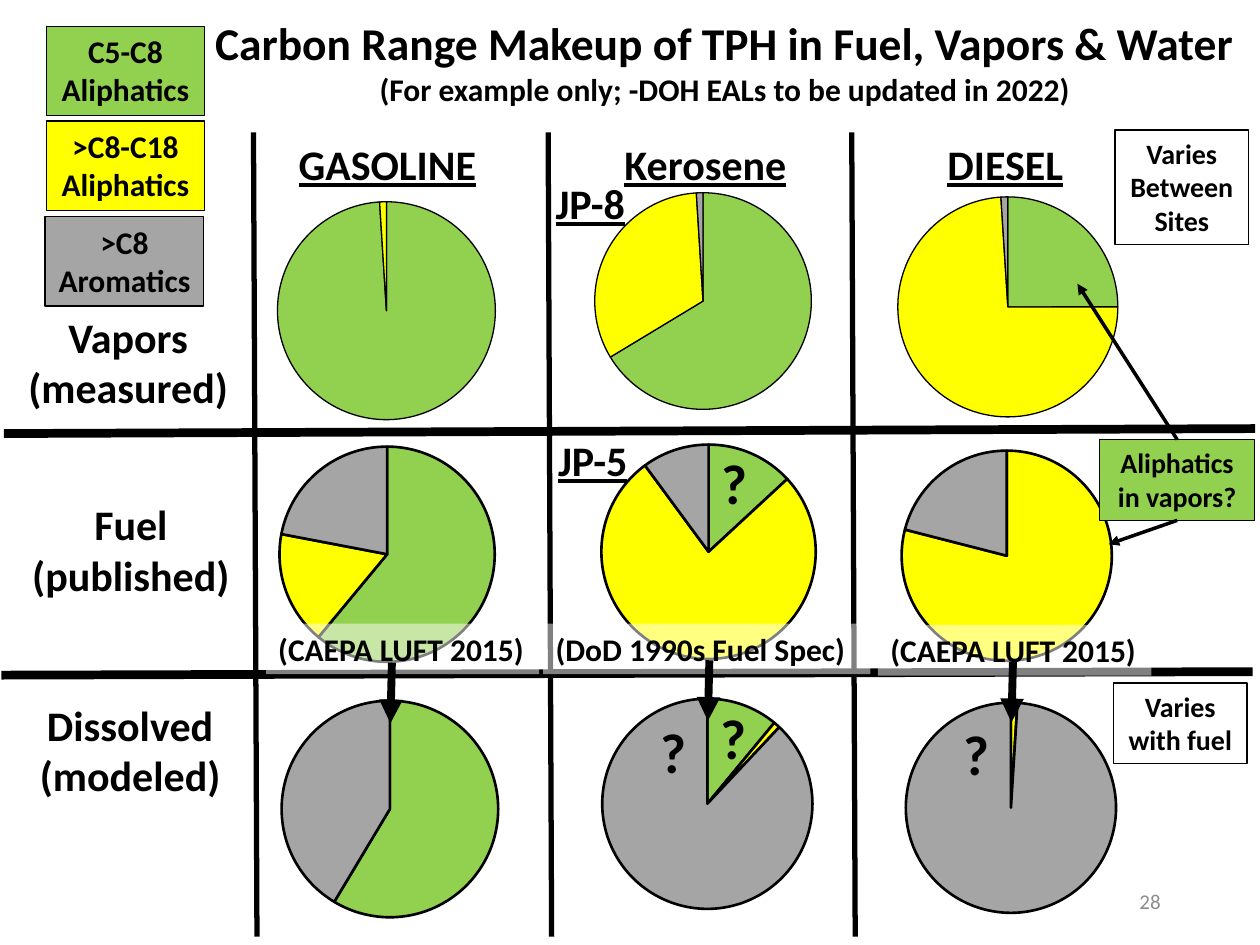
from lxml import etree
from pptx import Presentation
from pptx.chart.data import CategoryChartData as Data
from pptx.dml.color import RGBColor
from pptx.enum.chart import XL_CHART_TYPE as Kind
from pptx.enum.shapes import MSO_CONNECTOR as Wire, MSO_SHAPE as Form
from pptx.enum.text import MSO_ANCHOR as Anchor, MSO_AUTO_SIZE as Fit, PP_ALIGN as Align
from pptx.oxml import parse_xml
from pptx.oxml.ns import nsdecls, qn
from pptx.util import Cm, Pt

rgb = RGBColor.from_string
FONT, BLACK, WHITE = "Calibri", "000000", "FFFFFF"
GREEN, YELLOW, GRAY = "92D050", "FFFF00", "A5A5A5"

deck = Presentation()
deck.slide_width, deck.slide_height = Cm(25.4), Cm(19.05)
slide = deck.slides.add_slide(deck.slide_layouts[6])
shapes = slide.shapes


def box(at, rows, size, fill=None, edge=False, wrap=False, align=Align.CENTER):
    """Add a bold text box, or a rectangle when it has a fill or an edge."""
    place = [Cm(n) for n in at]
    if fill or edge:
        item = shapes.add_shape(Form.RECTANGLE, *place)
        item.shadow.inherit = False
        if fill:
            item.fill.solid()
            item.fill.fore_color.rgb = rgb(fill)
        else:
            item.fill.background()
        if edge:
            item.line.color.rgb = rgb(BLACK)
            item.line.width = Pt(0.75)
        else:
            item.line.fill.background()
    else:
        item = shapes.add_textbox(*place)
    frame = item.text_frame
    frame.text = "\n".join(rows)
    frame.word_wrap = wrap
    frame.auto_size = Fit.SHAPE_TO_FIT_TEXT
    frame.vertical_anchor = Anchor.TOP
    for para in frame.paragraphs:
        para.alignment = align
        font = para.font
        font.name, font.size, font.bold = FONT, Pt(size), True
        font.color.rgb = rgb(BLACK)
    return item


def link(x1, y1, x2, y2, width, arrow=False):
    """Add a straight black line, with an arrowhead at its end if asked."""
    wire = shapes.add_connector(Wire.STRAIGHT, Cm(x1), Cm(y1), Cm(x2), Cm(y2))
    wire.line.color.rgb = rgb(BLACK)
    wire.line.width = Pt(width)
    if arrow:
        edge = wire.line._get_or_add_ln()
        etree.SubElement(edge, qn("a:tailEnd"), type="triangle")
    etree.SubElement(wire._element.spPr, qn("a:effectLst"))
    return wire


# Pies: place, values, slice colours, outline width
three = [GREEN, YELLOW, GRAY]
four = three + [GRAY]
pies = [
    # Vapors
    ((4.78, 3.71, 6.02, 5.11), (99, 1, 0), [GREEN, YELLOW, "7030A0"], 0.75),
    ((10.46, 3.53, 7.42, 5.08), (67, 33, 1), three, 0.75),
    ((17.45, 3.61, 5.74, 5.16), (25, 74, 1), three, 0.75),
    # Fuel
    ((5.28, 8.56, 5.05, 5.23), (61, 17, 0, 22), four, 1.5),
    ((11.02, 8.61, 6.53, 5.03), (13, 76, 0, 10), four, 1.5),
    ((17.4, 8.74, 5.79, 4.93), (0, 79, 0, 21), ["5B9BD5"] + four[1:], 1.5),
    # Dissolved
    ((4.17, 13.77, 7.39, 5.08), (58, 0, 0, 41), [GREEN] * 3 + [GRAY], 1.5),
    ((11.15, 13.74, 6.22, 4.93), (11, 1, 0, 88), four, 1.5),
    ((16.81, 13.82, 7.14, 4.93), (0, 1, 0, 99), [YELLOW] * 3 + [GRAY], 1.5),
]
for at, vals, fills, width in pies:
    data = Data()
    data.categories = [str(n + 1) for n in range(len(vals))]
    data.add_series("Series 1", vals)
    chart = shapes.add_chart(Kind.PIE, *[Cm(n) for n in at], data).chart
    chart.has_legend = chart.has_title = False
    chart.font.name, chart.font.size = FONT, Pt(10)
    chart.font.color.rgb = rgb(BLACK)
    plot = chart.plots[0]
    plot.vary_by_categories = True
    for n, fill in enumerate(fills):
        part = plot.series[0].points[n].format
        part.fill.solid()
        part.fill.fore_color.rgb = rgb(fill)
        part.line.color.rgb = rgb(BLACK)
        part.line.width = Pt(width)
    # Centre the circle in its frame at 86 % of the shorter side
    wide, high = (0.86 * min(at[2:]) / side for side in at[2:])
    area = plot._element.getparent()
    for old in area.findall(qn("c:layout")):
        area.remove(old)
    area.insert(0, parse_xml(
        f'<c:layout {nsdecls("c")}><c:manualLayout><c:layoutTarget val="inner"/>'
        '<c:xMode val="edge"/><c:yMode val="edge"/>'
        f'<c:x val="{(1 - wide) / 2:.3f}"/><c:y val="{(1 - high) / 2:.3f}"/>'
        f'<c:w val="{wide:.3f}"/><c:h val="{high:.3f}"/>'
        '</c:manualLayout></c:layout>'))

# Grid lines
link(0.08, 8.74, 25.3, 8.64, 5)
link(0.03, 13.61, 25.25, 13.54, 5)
for x in (5.11, 11.05, 17.17):
    link(x, 2.67, x + 0.07, 18.88, 3)

# Title
title = box((4.01, 0.18, 21.21, 2.13), [
    "Carbon Range Makeup of TPH in Fuel, Vapors & Water",
    "(For example only; -DOH EALs to be updated in 2022)"], 26, wrap=True)
title.text_frame.paragraphs[1].font.size = Pt(18)

# Legend
box((0.94, 0.53, 3.18, 1.8), ["C5-C8", "Aliphatics"], 18, GREEN, True, True)
box((0.94, 2.44, 3.18, 1.8), [">C8-C18 Aliphatics"], 18, YELLOW, True, True)
box((0.91, 4.37, 3.2, 1.8), [">C8", "Aromatics"], 18, GRAY, True)

# Row heads
box((0.3, 6.15, 4.57, 2.31), ["Vapors", "(measured)"], 24)
box((0.38, 9.93, 4.52, 2.31), ["Fuel", "(published)"], 24)
box((0.53, 13.97, 4.19, 2.31), ["Dissolved", "(modeled)"], 24)

# Column heads and fuel names
for x, y, width, word in [
        (5.77, 2.67, 4.11, "GASOLINE"), (12.34, 2.67, 3.81, "Kerosene"),
        (18.85, 2.67, 2.87, "DIESEL"),
        (10.95, 3.45, 1.96, "JP-8"), (11, 8.64, 1.96, "JP-5")]:
    head = box((x, y, width, 1.27), [word], 24, align=Align.LEFT)
    head.text_frame.paragraphs[0].font.underline = True

# Question marks
for x, y in [(14.3, 8.92), (14.27, 14.05), (13.06, 14.33), (19.18, 14.38)]:
    box((x, y, 1.04, 1.63), ["?"], 32, align=Align.LEFT)

# Side notes
box((22.48, 2.62, 2.69, 2.31), ["Varies Between", "Sites"], 16, edge=True, wrap=True)
box((22.45, 13.77, 2.69, 1.63), ["Varies with fuel"], 16, edge=True, wrap=True)
note = box((22.17, 8.86, 3.12, 1.63), ["Aliphatics in vapors?"], 16, GREEN, True, True)
for side, x, y in [(0, 21.72, 5.72), (2, 22.35, 10.97)]:
    link(23.73, 8.86, x, y, 2, True).begin_connect(note, side)

# Sources over the fuel pies, half see-through
for x, y, width, word in [
        (5.36, 12.57, 5.51, "(CAEPA LUFT 2015)"),
        (10.95, 12.57, 6.6, "(DoD 1990s Fuel Spec)"),
        (17.7, 12.6, 5.51, "(CAEPA LUFT 2015)")]:
    cite = box((x, y, width, 1.02), [word], 18, WHITE, align=Align.LEFT)
    tint = cite._element.spPr.find(f'{qn("a:solidFill")}/{qn("a:srgbClr")}')
    etree.SubElement(tint, qn("a:alpha"), val="50000")

# Arrows from fuel to dissolved
for x, y in [(7.9, 13.36), (14.3, 13.31), (20.42, 13.34)]:
    link(x, y, x - 0.03, y + 1.22, 4.5, True)

# Page number
page = box((17.93, 17.65, 5.72, 1.02), ["28"], 12, wrap=True, align=Align.RIGHT)
page.text_frame.auto_size = Fit.NONE
page.text_frame.vertical_anchor = Anchor.MIDDLE
font = page.text_frame.paragraphs[0].font
font.bold = False
font.color.rgb = rgb("8C8C8C")

deck.save("out.pptx")
